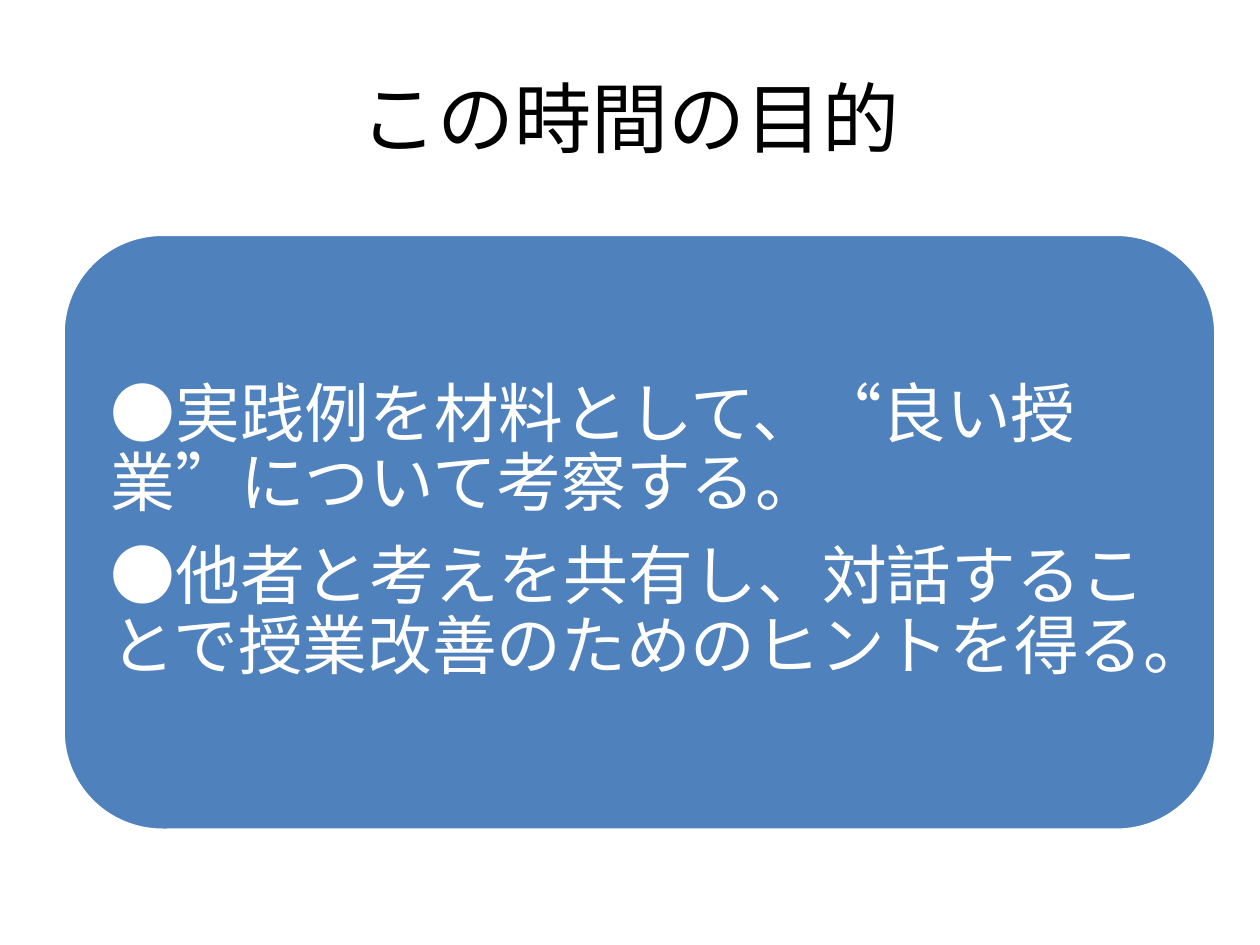
from pptx import Presentation
from pptx.dml.color import RGBColor
from pptx.enum import shapes, text
from pptx.util import Inches, Pt

TITLE = "この時間の目的"
GOALS = [
    "●実践例を材料として、“良い授業”について考察する。",
    "●他者と考えを共有し、対話することで授業改善のためのヒントを得る。",
]

THEME = {
    "font": "Cabin",
    "title_size": 44,
    "goal_size": 37,
    "ink": RGBColor(0x00, 0x00, 0x00),
    "paper": RGBColor(0xFF, 0xFF, 0xFF),
    "card": RGBColor(0x4F, 0x81, 0xBD),
}
TITLE_BOX = (0.5, 0.3, 9, 1.25)
CARD_BOX = (0.5, 1.86, 9.15, 4.73)
CARD_INSET = 0.15

TITLE_FORMAT = {"alignment": text.PP_ALIGN.CENTER}
GOAL_FORMAT = {
    "alignment": text.PP_ALIGN.LEFT,
    "line_spacing": 0.9,
    "space_after": Pt(13),
}


def set_all(target, values):
    for name, value in values.items():
        setattr(target, name, value)


def place(shape, box):
    names = ("left", "top", "width", "height")
    set_all(shape, dict(zip(names, map(Inches, box))))


def write(frame, lines, size, color, paragraph_format):
    """Fill a text frame with one paragraph per line, centred vertically."""
    set_all(frame, {"word_wrap": True, "auto_size": text.MSO_AUTO_SIZE.NONE,
                    "vertical_anchor": text.MSO_ANCHOR.MIDDLE})
    for index, line in enumerate(lines):
        paragraph = frame.add_paragraph() if index else frame.paragraphs[0]
        set_all(paragraph, paragraph_format)
        run = paragraph.add_run()
        run.text = line
        set_all(run.font, {"name": THEME["font"], "size": Pt(size)})
        run.font.color.rgb = color


def add_goal_card(slide):
    card = slide.shapes.add_shape(
        shapes.MSO_SHAPE.ROUNDED_RECTANGLE, *map(Inches, CARD_BOX))
    card.shadow.inherit = False
    card.fill.solid()
    card.fill.fore_color.rgb = THEME["card"]
    card.line.color.rgb = THEME["paper"]
    card.line.width = Pt(2)
    sides = ("left", "top", "right", "bottom")
    set_all(card.text_frame,
            {f"margin_{side}": Inches(CARD_INSET) for side in sides})
    write(card.text_frame, GOALS, THEME["goal_size"], THEME["paper"], GOAL_FORMAT)


def main():
    presentation = Presentation()
    set_all(presentation, {"slide_width": Inches(10), "slide_height": Inches(7.5)})
    title_only = presentation.slide_layouts[5]
    slide = presentation.slides.add_slide(title_only)

    title = slide.shapes.title
    place(title, TITLE_BOX)
    write(title.text_frame, [TITLE], THEME["title_size"], THEME["ink"], TITLE_FORMAT)
    add_goal_card(slide)

    presentation.save("out.pptx")


if __name__ == "__main__":
    main()
